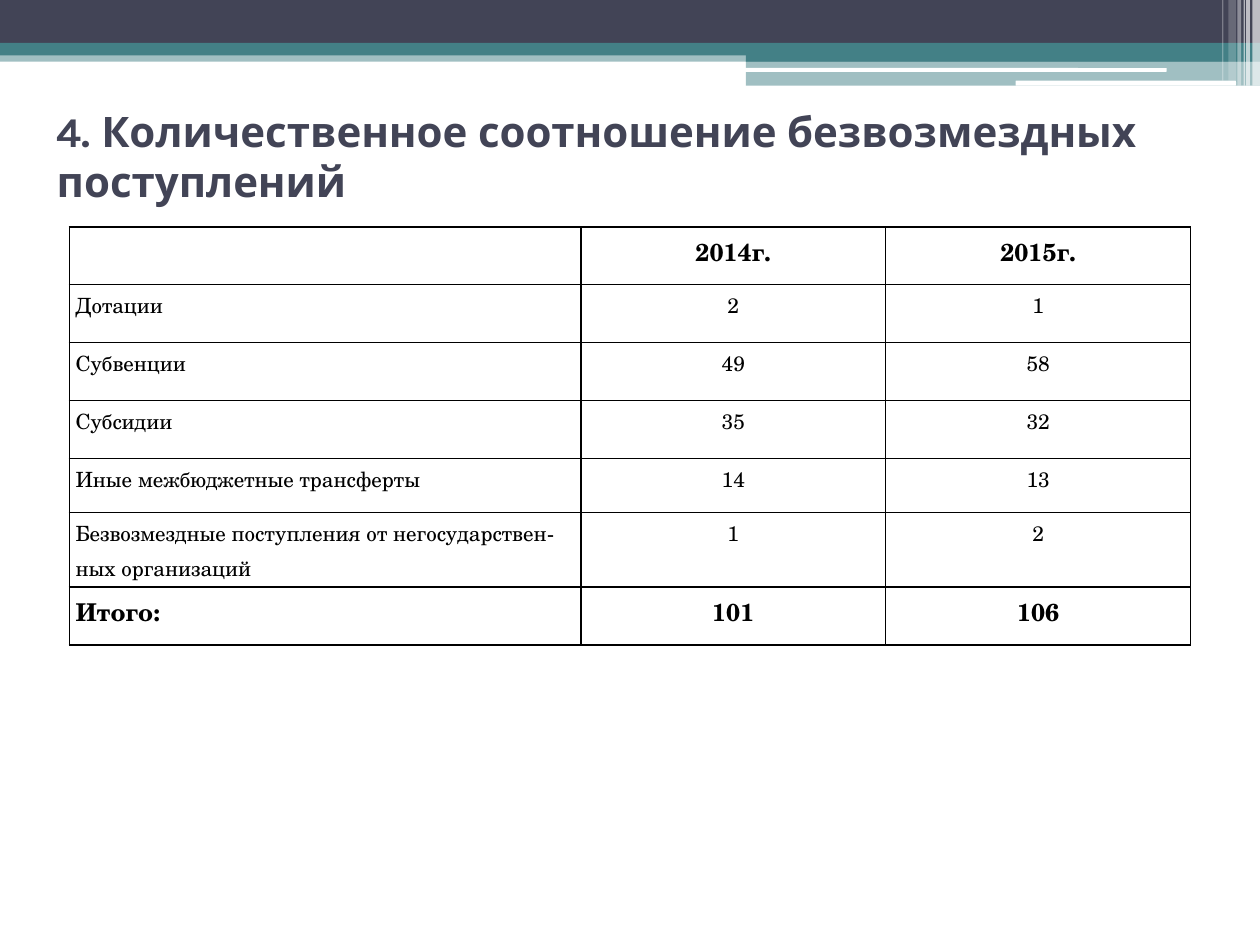
from lxml.etree import SubElement
from pptx import Presentation
from pptx.dml.color import RGBColor
from pptx.enum.shapes import MSO_SHAPE
from pptx.enum.text import MSO_ANCHOR, PP_ALIGN
from pptx.oxml.ns import qn
from pptx.util import Inches, Pt

SLATE = RGBColor(0x42, 0x44, 0x56)
TEAL = RGBColor(0x43, 0x80, 0x86)
WHITE = RGBColor(0xFF, 0xFF, 0xFF)
BLACK = RGBColor(0, 0, 0)

HEADING = "4. Количественное соотношение безвозмездных поступлений"
TRANSFERS = [
    ("", "2014г.", "2015г."),
    ("Дотации", "2", "1"),
    ("Субвенции", "49", "58"),
    ("Субсидии", "35", "32"),
    ("Иные межбюджетные трансферты", "14", "13"),
    ("Безвозмездные поступления от негосударствен-ных организаций", "1", "2"),
    ("Итого:", "101", "106"),
]
COLUMN_WIDTHS = (4.06, 2.42, 2.42)
ROW_HEIGHTS = (0.46, 0.46, 0.46, 0.46, 0.43, 0.59, 0.46)

BANDS = [
    (0, 0.4, 10, 0.09, TEAL, 50),
    (0, 0, 10, 0.34, SLATE, 100),
    (0, 0.34, 10, 0.1, TEAL, 100),
    (5.92, 0.39, 4.08, 0.1, TEAL, 100),
    (5.92, 0.48, 4.08, 0.2, TEAL, 50),
]
HIGHLIGHTS = [
    (5.91, 0.54, 3.35, 0.03, WHITE, 100),
    (8.06, 0.64, 1.75, 0.04, WHITE, 100),
]
STRIPES = [
    (9.94, 0.06, 0.68, 65),
    (9.89, 0.03, 0.68, 65),
    (9.87, 0.01, 0.68, 60),
    (9.82, 0.03, 0.68, 40),
    (9.75, 0.06, 0.64, 20),
    (9.7, 0.01, 0.64, 30),
]


def write(frame, text, *, font, size, color, bold=False, align=PP_ALIGN.LEFT, spacing=1.0):
    paragraph = frame.paragraphs[0]
    paragraph.alignment = align
    paragraph.line_spacing = spacing
    run = paragraph.add_run()
    run.text = text
    run.font.name = font
    run.font.size = Pt(size)
    run.font.bold = bold
    run.font.color.rgb = color


def add_band(slide, left, top, width, height, color, opacity, kind=MSO_SHAPE.RECTANGLE):
    band = slide.shapes.add_shape(kind, *map(Inches, (left, top, width, height)))
    band.shadow.inherit = False
    band.line.fill.background()
    band.fill.solid()
    band.fill.fore_color.rgb = color
    if opacity < 100:
        tint = band.fill._xPr.find(qn("a:solidFill"))[0]
        SubElement(tint, qn("a:alpha"), val=str(opacity * 1000))


def format_cell(cell):
    cell.margin_left = cell.margin_right = Inches(0.05)
    cell.margin_top = cell.margin_bottom = 0
    properties = cell._tc.get_or_add_tcPr()
    for side in ("lnL", "lnR", "lnT", "lnB"):
        border = SubElement(properties, qn(f"a:{side}"), w=str(Pt(1)))
        SubElement(SubElement(border, qn("a:solidFill")), qn("a:srgbClr"), val=str(BLACK))
    cell.fill.background()


def add_transfers(slide):
    frame = slide.shapes.add_table(
        len(TRANSFERS), len(COLUMN_WIDTHS), Inches(0.55), Inches(1.8),
        Inches(sum(COLUMN_WIDTHS)), Inches(sum(ROW_HEIGHTS)))
    table = frame.table
    table.first_row = table.horz_banding = False
    for column, width in zip(table.columns, COLUMN_WIDTHS):
        column.width = Inches(width)
    for index, (row, height, values) in enumerate(zip(table.rows, ROW_HEIGHTS, TRANSFERS)):
        row.height = Inches(height)
        strong = index in (0, len(TRANSFERS) - 1)
        for position, (cell, value) in enumerate(zip(row.cells, values)):
            format_cell(cell)
            if value:
                write(cell.text_frame, value, font="TeX Gyre Schola",
                      size=14 if strong else 12, color=BLACK, bold=strong, spacing=1.15,
                      align=PP_ALIGN.CENTER if position else PP_ALIGN.LEFT)


def main():
    """Build the slide comparing gratuitous receipts by year."""
    deck = Presentation()
    deck.slide_width, deck.slide_height = Inches(10), Inches(7.5)
    slide = deck.slides.add_slide(deck.slide_layouts[5])
    for band in BANDS:
        add_band(slide, *band)
    for highlight in HIGHLIGHTS:
        add_band(slide, *highlight, kind=MSO_SHAPE.ROUNDED_RECTANGLE)
    for left, width, height, opacity in STRIPES:
        add_band(slide, left, 0, width, height, WHITE, opacity)
    heading = slide.shapes.title
    heading.left, heading.top, heading.width, heading.height = map(
        Inches, (0.35, 0.84, 9.45, 0.79))
    heading.text_frame.vertical_anchor = MSO_ANCHOR.MIDDLE
    write(heading.text_frame, HEADING, font="Karla", size=24, color=SLATE, bold=True)
    add_transfers(slide)
    deck.save("out.pptx")


if __name__ == "__main__":
    main()
